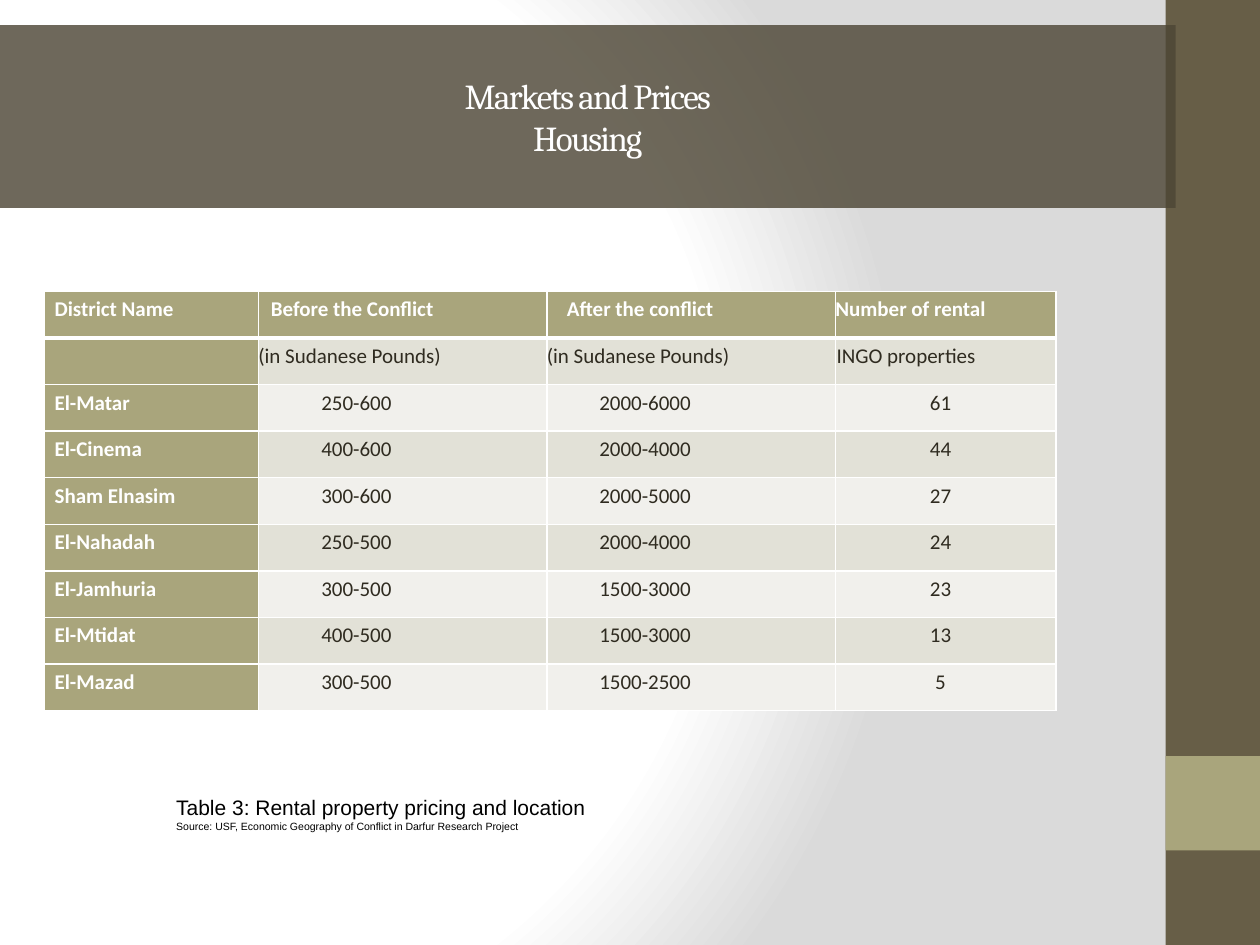
from dataclasses import dataclass

from pptx import Presentation
from pptx.dml.color import RGBColor
from pptx.enum.shapes import MSO_SHAPE
from pptx.enum.text import MSO_ANCHOR, PP_ALIGN
from pptx.oxml import parse_xml
from pptx.oxml.ns import nsdecls, qn
from pptx.util import Pt


@dataclass(frozen=True)
class Theme:
    """Colours, fonts and type sizes of the slide."""
    white: str = "FFFFFF"
    grey: str = "DADADA"
    black: str = "000000"
    ink: str = "2F2B20"
    brown: str = "675E47"
    banner: str = "4D4635"
    olive: str = "A9A57C"
    band_dark: str = "E2E1D7"
    band_light: str = "F1F0EC"
    title_font: str = "Cambria"
    table_font: str = "Calibri"
    caption_font: str = "Arial"
    title_size: int = 20
    text_size: int = 12
    source_size: int = 6


THEME = Theme()
COLUMN_WIDTHS = (122.4, 164.88, 164.88, 126)
ROW_HEIGHT = 26.64
HEADER_INDENTS = (6, 7.2, 11.5, 0)
UNIT_INDENTS = (0, 0, 0, 0.72)
BODY_INDENTS = (6, 36, 30, 0)
RENTALS = (
    ("District Name", "Before the Conflict", "After the conflict", "Number of rental"),
    ("", "(in Sudanese Pounds)", "(in Sudanese Pounds)", "INGO properties"),
    ("El-Matar", "250-600", "2000-6000", "61"),
    ("El-Cinema", "400-600", "2000-4000", "44"),
    ("Sham Elnasim", "300-600", "2000-5000", "27"),
    ("El-Nahadah", "250-500", "2000-4000", "24"),
    ("El-Jamhuria", "300-500", "1500-3000", "23"),
    ("El-Mtidat", "400-500", "1500-3000", "13"),
    ("El-Mazad", "300-500", "1500-2500", "5"),
)


def write_text(paragraph, text, *, font, size, color, bold=False,
               align=PP_ALIGN.LEFT, indent=0, line_spacing=1.0, tracking=0):
    """Write one formatted run into a paragraph."""
    properties = paragraph._p.get_or_add_pPr()
    properties.set("marL", str(Pt(indent)))
    properties.set("indent", "0")
    paragraph.alignment = align
    paragraph.line_spacing = line_spacing
    paragraph.space_before = Pt(0)
    paragraph.font.size = Pt(size)
    run = paragraph.add_run()
    run.text = text
    run.font.name = font
    run.font.size = Pt(size)
    run.font.bold = bold
    run.font.color.rgb = RGBColor.from_string(color)
    if tracking:
        run.font._element.set("spc", str(tracking * 100))


def set_margins(target, left, top, right, bottom):
    """Set the inner margins of a cell or text frame."""
    target.margin_left, target.margin_top = Pt(left), Pt(top)
    target.margin_right, target.margin_bottom = Pt(right), Pt(bottom)


def place(shape, left, top, width, height):
    """Move and size a shape."""
    shape.left, shape.top = Pt(left), Pt(top)
    shape.width, shape.height = Pt(width), Pt(height)


def set_background(slide):
    """Give the slide a radial gradient from white to grey."""
    stops = "".join(
        f'<a:gs pos="{position * 1000}"><a:srgbClr val="{color}"/></a:gs>'
        for position, color in ((0, THEME.white), (75, THEME.white), (100, THEME.grey)))
    slide.element.cSld.insert(0, parse_xml(
        f'<p:bg {nsdecls("p", "a")}><p:bgPr><a:gradFill rotWithShape="1">'
        f'<a:gsLst>{stops}</a:gsLst><a:path path="circle">'
        '<a:fillToRect l="20000" t="50000" r="100000" b="50000"/></a:path>'
        '</a:gradFill><a:effectLst/></p:bgPr></p:bg>'))


def add_block(slide, left, top, width, height, color):
    """Add a plain filled rectangle."""
    block = slide.shapes.add_shape(
        MSO_SHAPE.RECTANGLE, Pt(left), Pt(top), Pt(width), Pt(height))
    block.shadow.inherit = False
    block.fill.solid()
    block.fill.fore_color.rgb = RGBColor.from_string(color)
    block.line.fill.background()


def add_title(slide, lines):
    """Format the title placeholder as a translucent banner in front of the side bar."""
    title = slide.shapes.title
    title.element.getparent().append(title.element)
    place(title, 0, 14.4, 671.76, 104.4)
    title.fill.solid()
    title.fill.fore_color.rgb = RGBColor.from_string(THEME.banner)
    color = title.element.spPr.find(qn("a:solidFill"))[0]
    color.append(parse_xml(f'<a:alpha {nsdecls("a")} val="81000"/>'))
    frame = title.text_frame
    frame.vertical_anchor = MSO_ANCHOR.MIDDLE
    for index, line in enumerate(lines):
        paragraph = frame.add_paragraph() if index else frame.paragraphs[0]
        write_text(paragraph, line, font=THEME.title_font, size=THEME.title_size,
                   color=THEME.white, align=PP_ALIGN.CENTER, tracking=-1)


def set_borders(cell, top, bottom):
    """Draw white borders around a cell."""
    properties = cell._tc.get_or_add_tcPr()
    for side, width in (("L", 1), ("R", 1), ("T", top), ("B", bottom)):
        properties.append(parse_xml(
            f'<a:ln{side} {nsdecls("a")} w="{Pt(width)}"><a:solidFill>'
            f'<a:srgbClr val="{THEME.white}"/></a:solidFill></a:ln{side}>'))


def fill_cell(cell, text, row, column):
    """Write and style one table cell by its position."""
    heading = row == 0 or column == 0
    band = THEME.band_dark if row % 2 else THEME.band_light
    indents = (HEADER_INDENTS, UNIT_INDENTS)[row] if row < 2 else BODY_INDENTS
    centred = row > 1 and column == 3
    set_borders(cell, top=3 if row == 1 else 1, bottom=1 if row else 3)
    cell.fill.solid()
    cell.fill.fore_color.rgb = RGBColor.from_string(THEME.olive if heading else band)
    set_margins(cell, 0, 2.16, 5.76, 0)
    write_text(cell.text_frame.paragraphs[0], text, font=THEME.table_font,
               size=THEME.text_size, color=THEME.white if heading else THEME.ink,
               bold=heading, indent=indents[column], line_spacing=1.07,
               align=PP_ALIGN.CENTER if centred else PP_ALIGN.LEFT)


def add_rental_table(slide):
    """Add the table of rents by district."""
    table = slide.shapes.add_table(
        len(RENTALS), len(COLUMN_WIDTHS), Pt(25.2), Pt(166.5),
        Pt(sum(COLUMN_WIDTHS)), Pt(ROW_HEIGHT * len(RENTALS))).table
    table.horz_banding = False
    table.first_col = True
    for column, width in zip(table.columns, COLUMN_WIDTHS):
        column.width = Pt(width)
    for row, values in enumerate(RENTALS):
        table.rows[row].height = Pt(ROW_HEIGHT)
        for column, text in enumerate(values):
            fill_cell(table.cell(row, column), text, row, column)


def add_caption(slide, caption, source):
    """Add the table caption with its source line."""
    frame = slide.shapes.add_textbox(Pt(93.6), Pt(454), Pt(420), Pt(24)).text_frame
    frame.word_wrap = True
    set_margins(frame, 7.2, 0, 7.2, 0)
    write_text(frame.paragraphs[0], caption, font=THEME.caption_font,
               size=THEME.text_size, color=THEME.black)
    write_text(frame.add_paragraph(), source, font=THEME.caption_font,
               size=THEME.source_size, color=THEME.black)


def main():
    """Build the slide and save it."""
    presentation = Presentation()
    presentation.slide_width, presentation.slide_height = Pt(720), Pt(540)
    slide = presentation.slides.add_slide(presentation.slide_layouts[5])
    set_background(slide)
    add_block(slide, 666, 0, 54, 540, THEME.brown)
    add_block(slide, 666, 432, 54, 54, THEME.olive)
    add_title(slide, ("Markets and Prices", "Housing"))
    add_rental_table(slide)
    add_caption(slide, "Table 3: Rental property pricing and location",
                "Source: USF, Economic Geography of Conflict in Darfur Research Project")
    presentation.save("out.pptx")


if __name__ == "__main__":
    main()
